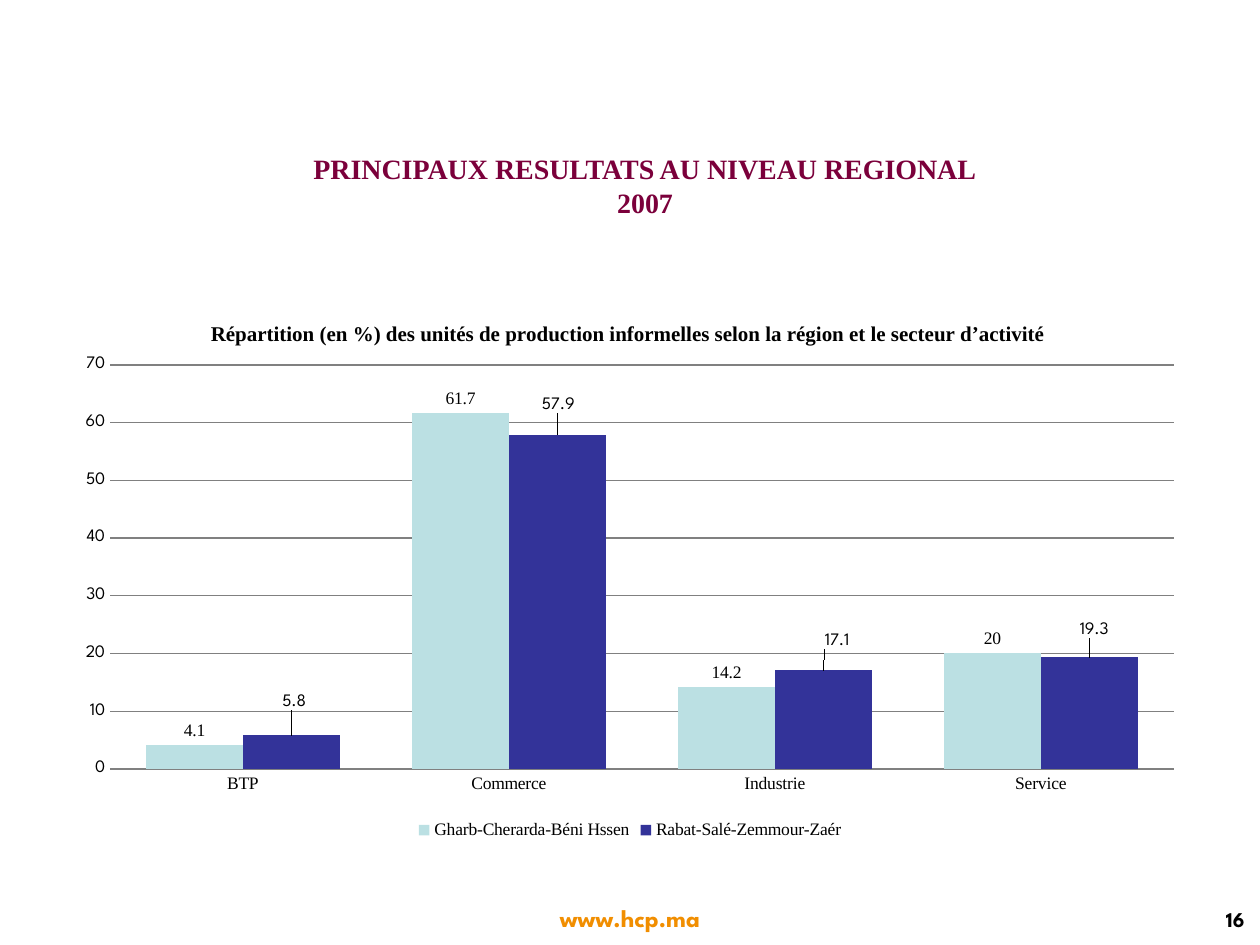
from lxml import etree
from pptx import Presentation
from pptx.chart.data import CategoryChartData
from pptx.dml.color import RGBColor
from pptx.enum.chart import XL_CHART_TYPE, XL_LABEL_POSITION, XL_LEGEND_POSITION, XL_TICK_MARK
from pptx.enum.text import MSO_ANCHOR, PP_ALIGN
from pptx.oxml.ns import qn
from pptx.util import Pt

CLUSTERED = XL_CHART_TYPE.COLUMN_CLUSTERED
OUTSIDE = XL_LABEL_POSITION.OUTSIDE_END
BOTTOM = XL_LEGEND_POSITION.BOTTOM
NO_TICK = XL_TICK_MARK.NONE
MIDDLE = MSO_ANCHOR.MIDDLE
CENTER, RIGHT = PP_ALIGN.CENTER, PP_ALIGN.RIGHT

PX = 914400 / 126
SERIF, SANS = "Times New Roman", "League Spartan"
BLACK = RGBColor(0x00, 0x00, 0x00)
PLUM = RGBColor(0x7B, 0x00, 0x3B)
ORANGE = RGBColor(0xF1, 0x8E, 0x00)
GRAY = RGBColor(0x80, 0x80, 0x80)
PALE_BLUE = RGBColor(0xBB, 0xE0, 0xE3)
NAVY = RGBColor(0x33, 0x33, 0x99)

# text, box in px, size, font, colour, alignment
TEXTS = [
    ("PRINCIPAUX RESULTATS AU NIVEAU REGIONAL\v2007", (164, 106, 962, 158), 16, SERIF, PLUM, CENTER),
    ("www.hcp.ma", (481, 897, 298, 42), 14, SANS, ORANGE, CENTER),
    ("16", (1066, 897, 191, 44), 12, SANS, BLACK, RIGHT),
]
CHART_TITLE = "Répartition (en %) des unités de production informelles selon la région et le secteur d’activité"
CHART_BOX = (63, 294, 1134, 551)
PLOT_BOX = (110, 365, 1064, 404)
CHART_TITLE_SPOT = (207, 317)
SECTORS = ["BTP", "Commerce", "Industrie", "Service"]
# region, shares, bar colour, label font, label shifts in px
REGIONS = [
    ("Gharb-Cherarda-Béni Hssen", (4.1, 61.7, 14.2, 20), PALE_BLUE, SERIF, ()),
    ("Rabat-Salé-Zemmour-Zaér", (5.8, 57.9, 17.1, 19.3), NAVY, SANS,
     ((3, -20), (1, -16), (14, -16), (5, -14))),
]


def emu(lengths):
    return [round(length * PX) for length in lengths]


def style(font, size, name, color=BLACK, bold=False):
    font.size, font.name, font.bold = Pt(size), name, bold
    font.color.rgb = color


def manual_layout(x, y, size=(), modes=()):
    """Return a c:layout element; x, y and size are in px, scaled to the chart."""
    layout = etree.Element(qn("c:layout"))
    manual = etree.SubElement(layout, qn("c:manualLayout"))
    _, _, width, height = CHART_BOX
    fractions = zip("xywh", (x, y, *size), (width, height) * 2)
    values = [*modes, *((tag, f"{length / full:.4f}") for tag, length, full in fractions)]
    for tag, value in values:
        etree.SubElement(manual, qn(f"c:{tag}")).set("val", value)
    return layout


def place(parent, spot, size=(), modes=()):
    """Fix a chart part at a page position, replacing its automatic layout."""
    for old in parent.findall(qn("c:layout")):
        parent.remove(old)
    modes = [*modes, ("xMode", "edge"), ("yMode", "edge")]
    layout = manual_layout(spot[0] - CHART_BOX[0], spot[1] - CHART_BOX[1], size, modes)
    before = parent.find(qn("c:tx"))
    parent.insert(0 if before is None else parent.index(before) + 1, layout)


def add_text(page, text, bounds, size, name, color, alignment):
    box = page.shapes.add_textbox(*emu(bounds))
    frame = box.text_frame
    frame.word_wrap = True
    frame.vertical_anchor = MIDDLE
    frame.text = text
    para = frame.paragraphs[0]
    para.alignment = alignment
    for span in para.runs:
        style(span.font, size, name, color, True)


def format_series(series, color, label_font, shifts):
    series.format.fill.solid()
    series.format.fill.fore_color.rgb = color
    series.invert_if_negative = False
    labels = series.data_labels
    labels.show_value = True
    labels.position = OUTSIDE
    style(labels.font, 10, label_font)
    for index in range(len(shifts)):
        label = series.points[index].data_label
        label.position = OUTSIDE
        style(label.font, 10, label_font)
    for shift, node in zip(shifts, series._element.iter(qn("c:dLbl"))):
        node.insert(1, manual_layout(*shift))


def add_chart(page):
    data = CategoryChartData()
    data.categories = SECTORS
    for region, shares, *_ in REGIONS:
        data.add_series(region, shares)
    chart = page.shapes.add_chart(CLUSTERED, *emu(CHART_BOX), data).chart
    style(chart.font, 10, SANS)

    chart.has_title = True
    chart.chart_title.text_frame.text = CHART_TITLE
    style(chart.chart_title.text_frame.paragraphs[0].runs[0].font, 12, SERIF, bold=True)
    place(chart.chart_title._element, CHART_TITLE_SPOT)
    place(chart._chartSpace.chart.plotArea, PLOT_BOX[:2], PLOT_BOX[2:], [("layoutTarget", "inner")])

    chart.has_legend = True
    chart.legend.position = BOTTOM
    chart.legend.include_in_layout = False
    style(chart.legend.font, 10, SERIF)

    plot = chart.plots[0]
    plot.gap_width, plot.overlap = 75, 0
    plot.vary_by_categories = False
    for series, (_, _, color, label_font, shifts) in zip(plot.series, REGIONS):
        format_series(series, color, label_font, shifts)

    for axis, name in ((chart.category_axis, SERIF), (chart.value_axis, SANS)):
        axis.major_tick_mark = axis.minor_tick_mark = NO_TICK
        style(axis.tick_labels.font, 10, name)
    chart.category_axis.format.line.color.rgb = GRAY
    shares_axis = chart.value_axis
    shares_axis.minimum_scale, shares_axis.maximum_scale, shares_axis.major_unit = 0, 70, 10
    shares_axis.format.line.fill.background()
    shares_axis.has_major_gridlines = True
    shares_axis.major_gridlines.format.line.color.rgb = GRAY


def main():
    deck = Presentation()
    deck.slide_width, deck.slide_height = emu((1260, 945))
    page = deck.slides.add_slide(deck.slide_layouts[6])
    for text in TEXTS:
        add_text(page, *text)
    add_chart(page)
    deck.save("out.pptx")


if __name__ == "__main__":
    main()
